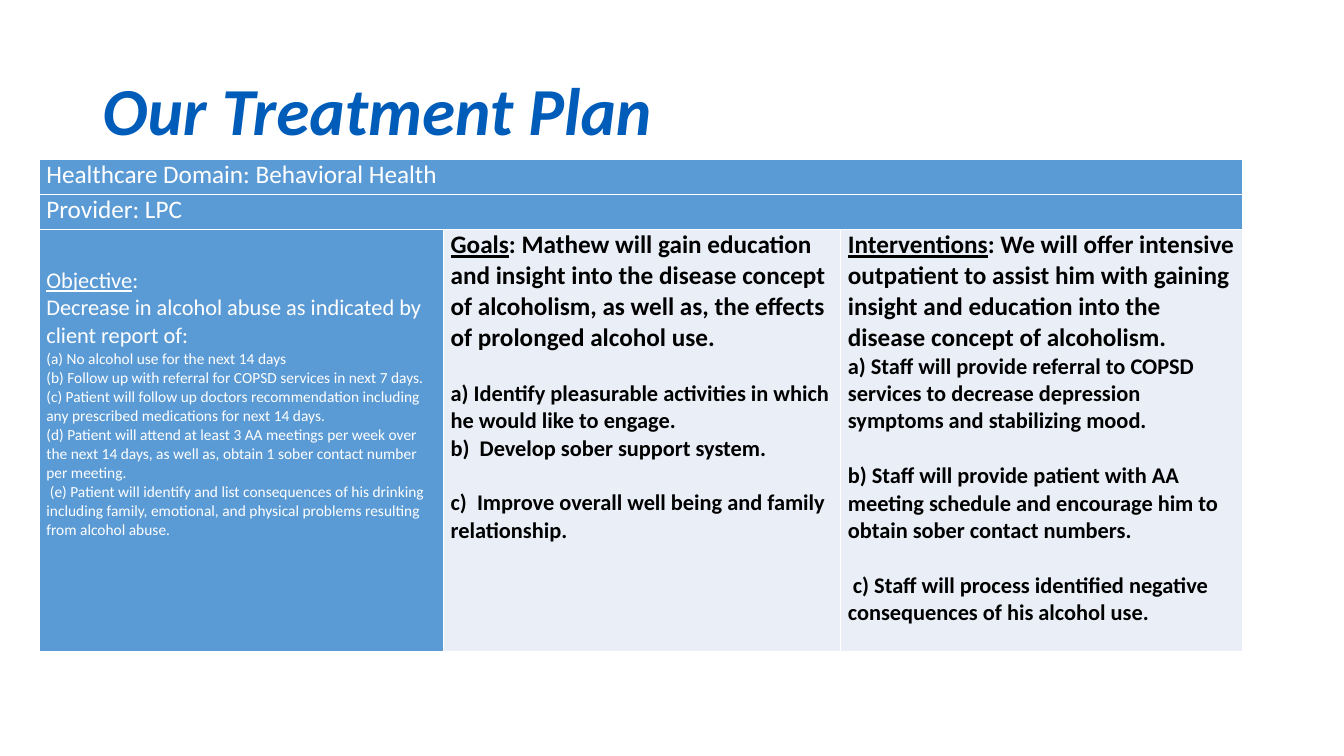
from lxml import etree
from pptx import Presentation
from pptx.dml.color import RGBColor
from pptx.enum.text import MSO_ANCHOR
from pptx.oxml.ns import qn
from pptx.util import Inches, Pt

MIDDLE = MSO_ANCHOR.MIDDLE
FONT = "Calibri"
NAVY, BLUE, PALE = "005CB9", "5B9BD5", "EAEFF7"
WHITE, BLACK = "FFFFFF", "000000"
GAP = 19.5  # one line of 16 pt text

# Each line: (underlined lead, text, size, space before)
OBJECTIVE = [
    ("Objective", ":", 16, 0),
    ("", "Decrease in alcohol abuse as indicated by client report of:", 16, 0),
    ("", "(a) No alcohol use for the next 14 days", 11, 0),
    ("", "(b) Follow up with referral for COPSD services in next 7 days.", 11, 0),
    ("", "(c) Patient will follow up doctors recommendation including any "
         "prescribed medications for next 14 days.", 11, 0),
    ("", "(d) Patient will attend at least 3 AA meetings per week over the next "
         "14 days, as well as, obtain 1 sober contact number per meeting.", 11, 0),
    ("", " (e) Patient will identify and list consequences of his drinking "
         "including family, emotional, and physical problems resulting from "
         "alcohol abuse.", 11, 0),
]
GOALS = [
    ("Goals", ": Mathew will gain education and insight into the disease concept "
              "of alcoholism, as well as, the effects of prolonged alcohol use.",
     18, 0),
    ("", "a) Identify pleasurable activities in which he would like to engage.",
     16, GAP),
    ("", "b)  Develop sober support system.", 16, 0),
    ("", "c)  Improve overall well being and family relationship.", 16, GAP),
]
ACTIONS = [
    ("Interventions", ": We will offer intensive outpatient to assist him with "
                      "gaining insight and education into the disease concept "
                      "of alcoholism.", 18, 0),
    ("", "a) Staff will provide referral to COPSD services to decrease "
         "depression symptoms and stabilizing mood.", 16, 0),
    ("", "b) Staff will provide patient with AA meeting schedule and encourage "
         "him to obtain sober contact numbers.", 16, GAP),
    ("", " c) Staff will process identified negative consequences of his "
         "alcohol use.", 16, GAP),
]


def color(code):
    return RGBColor.from_string(code)


class Deck:
    def __init__(self, wide, high):
        self.prs = Presentation()
        self.prs.slide_width = Inches(wide)
        self.prs.slide_height = Inches(high)
        self.slide = self.prs.slides.add_slide(self.prs.slide_layouts[6])

    def style(self, para, size, ink, bold=False, slant=False):
        font = para.font
        font.name, font.size = FONT, Pt(size)
        font.bold, font.italic = bold, slant
        font.color.rgb = color(ink)

    def title(self, text, box):
        frame = self.slide.shapes.add_textbox(*map(Inches, box)).text_frame
        frame.word_wrap = True
        frame.vertical_anchor = MIDDLE
        para = frame.paragraphs[0]
        para.text = text
        para.line_spacing = 0.9
        self.style(para, 48, NAVY, True, True)

    def table(self, left, top, cols, rows):
        box = map(Inches, (left, top, sum(cols), sum(rows)))
        grid = self.slide.shapes.add_table(len(rows), len(cols), *box).table
        grid.first_row = grid.horz_banding = False
        for col, width in zip(grid.columns, cols):
            col.width = Inches(width)
        for row, height in zip(grid.rows, rows):
            row.height = Inches(height)
        for cell in grid.iter_cells():
            self.border(cell)
        return grid

    def border(self, cell):
        props = cell._tc.get_or_add_tcPr()
        for side in ("a:lnL", "a:lnR", "a:lnT", "a:lnB"):
            line = etree.SubElement(props, qn(side), w=str(Pt(1)))
            fill = etree.SubElement(line, qn("a:solidFill"))
            etree.SubElement(fill, qn("a:srgbClr"), val=WHITE)

    def cell(self, cell, lines, fill, ink, bold=False, top=0):
        cell.fill.solid()
        cell.fill.fore_color.rgb = color(fill)
        cell.margin_left = cell.margin_right = Inches(0.07)
        cell.margin_top, cell.margin_bottom = Inches(top), 0
        frame = cell.text_frame
        for num, (lead, text, size, gap) in enumerate(lines):
            para = frame.add_paragraph() if num else frame.paragraphs[0]
            if gap:
                para.space_before = Pt(gap)
            if lead:
                run = para.add_run()
                run.text = lead
                run.font.underline = True
            para.add_run().text = text
            self.style(para, size, ink, bold)


def main():
    deck = Deck(13.33, 7.5)
    deck.title("Our Treatment Plan", (0.92, 0.4, 11.5, 1.45))

    # Treatment table
    grid = deck.table(0.39, 1.58, (4.01, 3.94, 3.98), (0.35, 0.35, 4.18))

    # Full-width heading rows
    heads = ("Healthcare Domain: Behavioral Health", "Provider: LPC")
    for row, text in enumerate(heads):
        grid.cell(row, 0).merge(grid.cell(row, 2))
        deck.cell(grid.cell(row, 0), [("", text, 18, 0)], BLUE, WHITE)

    # Objective, goals and interventions
    deck.cell(grid.cell(2, 0), OBJECTIVE, BLUE, WHITE, top=0.37)
    for col, lines in enumerate((GOALS, ACTIONS), 1):
        deck.cell(grid.cell(2, col), lines, PALE, BLACK, bold=True)

    deck.prs.save("out.pptx")


if __name__ == "__main__":
    main()
